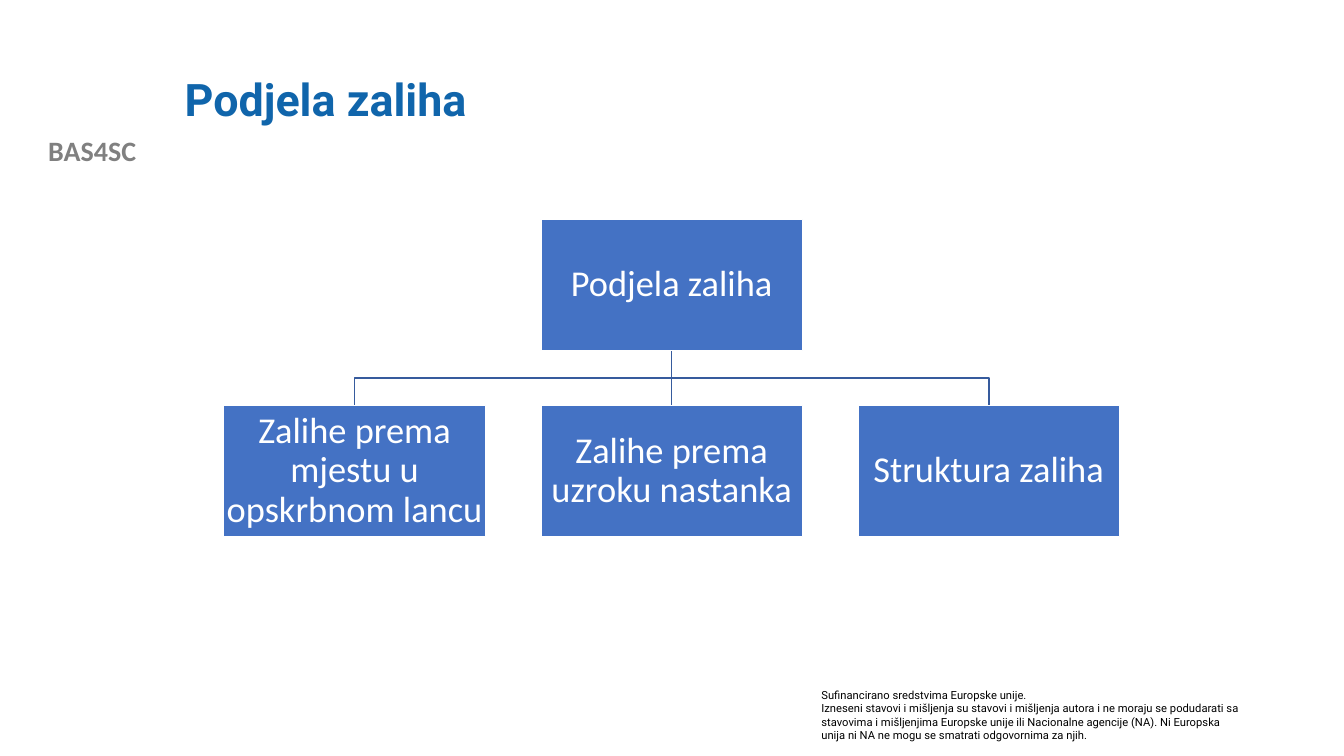
from dataclasses import dataclass

from lxml import etree
from pptx import Presentation
from pptx import util as u
from pptx.dml.color import RGBColor
from pptx.enum import shapes, text
from pptx.oxml.ns import qn


@dataclass(frozen=True)
class Theme:
    title: RGBColor = RGBColor(0x10, 0x65, 0xAB)
    label: RGBColor = RGBColor(0x80, 0x80, 0x80)
    notice: RGBColor = RGBColor(0, 0, 0)
    node: RGBColor = RGBColor(0x44, 0x72, 0xC4)
    link: RGBColor = RGBColor(0x36, 0x5B, 0x9D)
    white: RGBColor = RGBColor(0xFF, 0xFF, 0xFF)
    heading_font: str = "Roboto"
    body_font: str = "Calibri"
    title_size: int = 32
    node_size: int = 26
    label_size: int = 20
    notice_size: int = 8


theme = Theme()


def write(frame, content, font, size, color, bold=False, align=text.PP_ALIGN.LEFT, spacing=None):
    frame.text = content
    frame.word_wrap = True
    for para in frame.paragraphs:
        para.alignment = align
        para.line_spacing = spacing
        for span in para.runs:
            span.font.name = font
            span.font.size = u.Pt(size)
            span.font.bold = bold
            span.font.color.rgb = color


def add_node(left, top, caption):
    box = page.shapes.add_shape(
        shapes.MSO_SHAPE.RECTANGLE, u.Cm(left), u.Cm(top), u.Cm(node_width), u.Cm(node_height))
    box.shadow.inherit = False
    box.fill.solid()
    box.fill.fore_color.rgb = theme.node
    box.line.color.rgb = theme.white
    box.line.width = u.Pt(1)
    frame = box.text_frame
    frame.margin_left = frame.margin_right = frame.margin_top = frame.margin_bottom = u.Cm(0.04)
    frame.vertical_anchor = text.MSO_ANCHOR.MIDDLE
    write(frame, caption, theme.body_font, theme.node_size, theme.white,
          align=text.PP_ALIGN.CENTER, spacing=0.9)
    return box


deck = Presentation()
deck.slide_width = u.Cm(33.87)
deck.slide_height = u.Cm(19.05)
page = deck.slides.add_slide(deck.slide_layouts[5])

title = page.shapes.title
title.left, title.top, title.width, title.height = u.Cm(4.4), u.Cm(1.02), u.Cm(27.08), u.Cm(3.1)
title.text_frame.vertical_anchor = text.MSO_ANCHOR.MIDDLE
title.text_frame.auto_size = text.MSO_AUTO_SIZE.NONE
write(title.text_frame, "Podjela zaliha", theme.heading_font, theme.title_size, theme.title,
      bold=True, spacing=0.9)

label = page.shapes.add_textbox(u.Cm(0), u.Cm(3.25), u.Cm(4.65), u.Cm(1.11))
write(label.text_frame, "BAS4SC", theme.body_font, theme.label_size, theme.label,
      bold=True, align=text.PP_ALIGN.CENTER)

notice = page.shapes.add_textbox(u.Cm(20.45), u.Cm(17.22), u.Cm(11.1), u.Cm(1.63))
write(notice.text_frame,
      "Sufinancirano sredstvima Europske unije.\n"
      "Izneseni stavovi i mišljenja su stavovi i mišljenja autora i ne moraju se podudarati sa "
      "stavovima i mišljenjima Europske unije ili Nacionalne agencije (NA). "
      "Ni Europska unija ni NA ne mogu se smatrati odgovornima za njih.",
      theme.heading_font, theme.notice_size, theme.notice)

node_width, node_height, pitch = 6.6, 3.3, 7.99
root_left, root_top, child_top = 13.63, 5.53, 10.22
center = root_left + node_width / 2
root_bottom = root_top + node_height
middle = (root_bottom + child_top) / 2

for side in (-1, 1):
    end = center + side * pitch
    builder = page.shapes.build_freeform(u.Cm(center), u.Cm(root_bottom))
    builder.add_line_segments(
        [(u.Cm(x), u.Cm(y)) for x, y in ((center, middle), (end, middle), (end, child_top))],
        close=False)
    branch = builder.convert_to_shape()
    branch.shadow.inherit = False
    branch.fill.background()
    branch.line.color.rgb = theme.link
    branch.line.width = u.Pt(1)

trunk = page.shapes.add_connector(
    shapes.MSO_CONNECTOR.STRAIGHT, u.Cm(center), u.Cm(root_bottom), u.Cm(center), u.Cm(child_top))
trunk.line.color.rgb = theme.link
trunk.line.width = u.Pt(1)
etree.SubElement(trunk._element.spPr, qn("a:effectLst"))

root = add_node(root_left, root_top, "Podjela zaliha")
captions = ["Zalihe prema mjestu u opskrbnom lancu", "Zalihe prema uzroku nastanka", "Struktura zaliha"]
children = [add_node(root_left + (column - 1) * pitch, child_top, caption)
            for column, caption in enumerate(captions)]
trunk.begin_connect(root, 2)
trunk.end_connect(children[1], 0)

deck.save("out.pptx")
